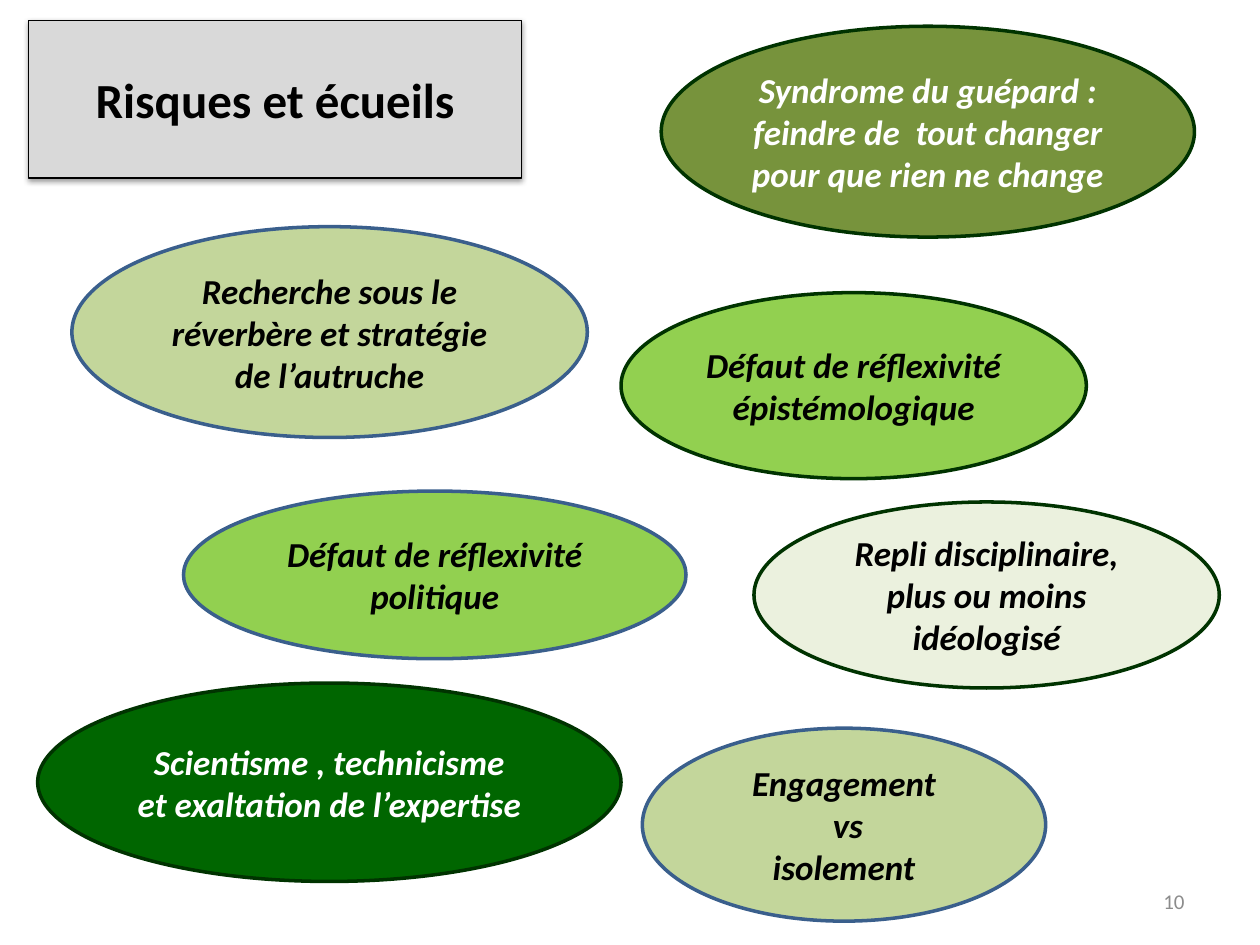
"""Build the slide on risks and pitfalls: a title panel and seven labelled ellipses."""
import pptx
import pptx.dml.color
import pptx.enum.shapes
import pptx.enum.text
import pptx.oxml
import pptx.oxml.ns
import pptx.util

Cm = pptx.util.Cm
Pt = pptx.util.Pt
RGBColor = pptx.dml.color.RGBColor
ALIGN = pptx.enum.text.PP_ALIGN
SHAPE = pptx.enum.shapes.MSO_SHAPE

BLACK = RGBColor(0x00, 0x00, 0x00)
WHITE = RGBColor(0xFF, 0xFF, 0xFF)
PANEL_GREY = RGBColor(0xD9, 0xD9, 0xD9)
NUMBER_GREY = RGBColor(0x8C, 0x8C, 0x8C)
OLIVE = RGBColor(0x77, 0x93, 0x3C)
SAGE = RGBColor(0xC3, 0xD6, 0x9B)
PALE = RGBColor(0xEB, 0xF1, 0xDE)
LIME = RGBColor(0x92, 0xD0, 0x50)
FOREST = RGBColor(0x00, 0x66, 0x00)
DARK_GREEN = RGBColor(0x00, 0x33, 0x00)
BLUE = RGBColor(0x3A, 0x5F, 0x8C)

FONT = "Calibri"
TITLE = [["Risques et écueils"]]
TITLE_PLACE = (0.58, 0.41, 9.93, 3.18)
NUMBER = [["10"]]
NUMBER_PLACE = (18.21, 17.65, 5.92, 1.02)

RISKS = [
    ([["Syndrome du guépard : feindre de  tout changer pour que rien ne change"]],
     (13.33, 0.53, 10.75, 4.25), OLIVE, DARK_GREEN, WHITE),
    ([["Scientisme , technicisme", "et exaltation de l’expertise"]],
     (0.76, 13.77, 11.76, 4), FOREST, DARK_GREEN, WHITE),
    ([["Recherche sous le réverbère et stratégie de l’autruche"]],
     (1.45, 4.57, 10.39, 4.25), SAGE, BLUE, BLACK),
    ([["Défaut de réflexivité épistémologique"]],
     (12.52, 5.9, 9.38, 3.75), LIME, DARK_GREEN, BLACK),
    ([["Repli disciplinaire, plus ou moins idéologisé"]],
     (15.2, 10.12, 9.38, 3.75), PALE, DARK_GREEN, BLACK),
    ([["Défaut de réflexivité politique"]],
     (3.7, 9.9, 10.13, 3.38), LIME, BLUE, BLACK),
    ([["Engagement", " vs"], ["isolement"]],
     (12.95, 14.68, 8.13, 3.89), SAGE, BLUE, BLACK),
]

TITLE_SHADOW = (
    f'<a:effectLst {pptx.oxml.ns.nsdecls("a")}>'
    '<a:outerShdw blurRad="39370" dist="20320" dir="5400000" rotWithShape="0">'
    '<a:srgbClr val="000000"><a:alpha val="38000"/></a:srgbClr>'
    "</a:outerShdw></a:effectLst>"
)


def write(box, paragraphs, size, color, align=ALIGN.CENTER, bold=True, italic=False):
    frame = box.text_frame
    frame.word_wrap = True
    frame.vertical_anchor = pptx.enum.text.MSO_ANCHOR.MIDDLE
    for index, lines in enumerate(paragraphs):
        para = frame.add_paragraph() if index else frame.paragraphs[0]
        para.alignment = align
        for position, line in enumerate(lines):
            if position:
                para.add_line_break()
            span = para.add_run()
            span.text = line
            span.font.name = FONT
            span.font.size = Pt(size)
            span.font.bold = bold
            span.font.italic = italic
            span.font.color.rgb = color


def add_panel(page, kind, place, fill, line, width):
    panel = page.shapes.add_shape(kind, *map(Cm, place))
    panel.shadow.inherit = False
    panel.fill.solid()
    panel.fill.fore_color.rgb = fill
    panel.line.color.rgb = line
    panel.line.width = Pt(width)
    return panel


def main():
    deck = pptx.Presentation()
    deck.slide_width, deck.slide_height = Cm(25.4), Cm(19.05)
    page = deck.slides.add_slide(deck.slide_layouts[6])

    title = add_panel(page, SHAPE.RECTANGLE, TITLE_PLACE, PANEL_GREY, BLACK, 0.75)
    properties = title.element.spPr
    properties.replace(properties.find(pptx.oxml.ns.qn("a:effectLst")),
                       pptx.oxml.parse_xml(TITLE_SHADOW))
    write(title, TITLE, 28, BLACK)

    number = page.shapes.add_textbox(*map(Cm, NUMBER_PLACE))
    write(number, NUMBER, 12, NUMBER_GREY, ALIGN.RIGHT, bold=False)

    for words, place, fill, line, color in RISKS:
        ellipse = add_panel(page, SHAPE.OVAL, place, fill, line, 2)
        write(ellipse, words, 20, color, italic=True)

    deck.save("out.pptx")


if __name__ == "__main__":
    main()
